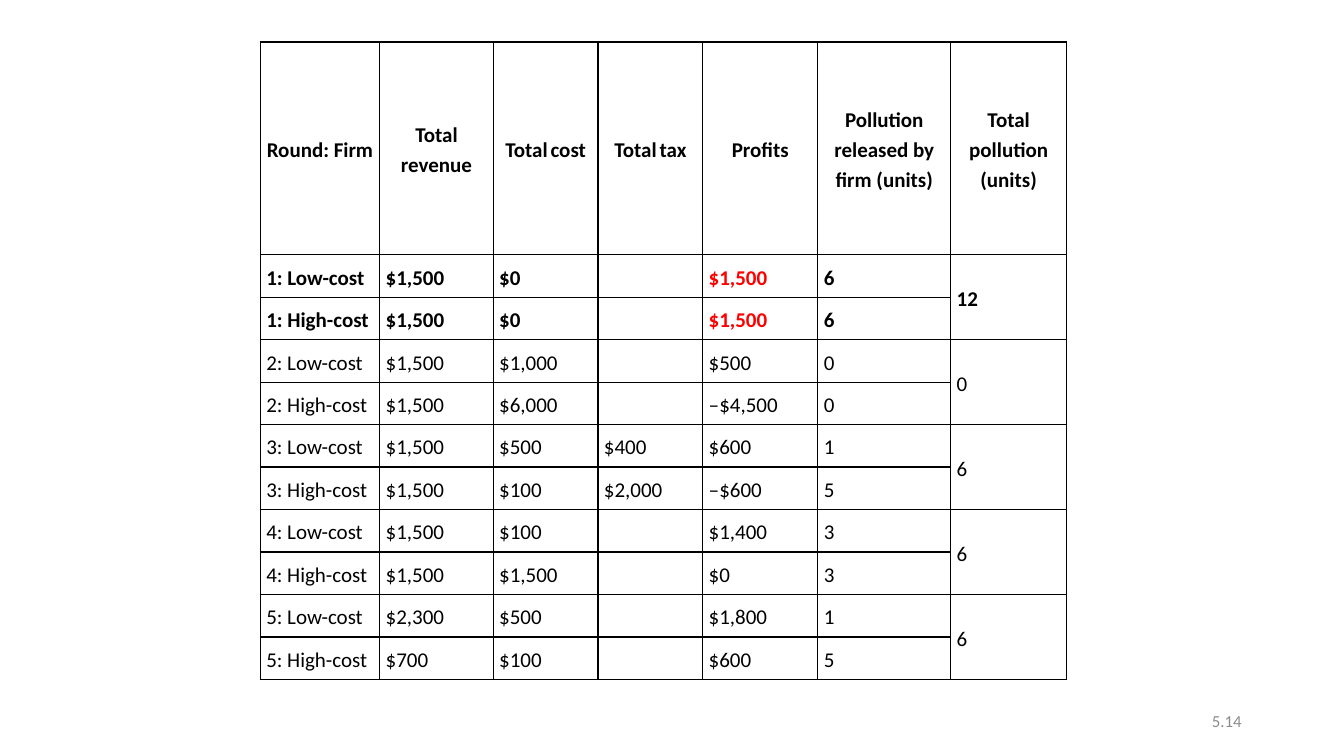
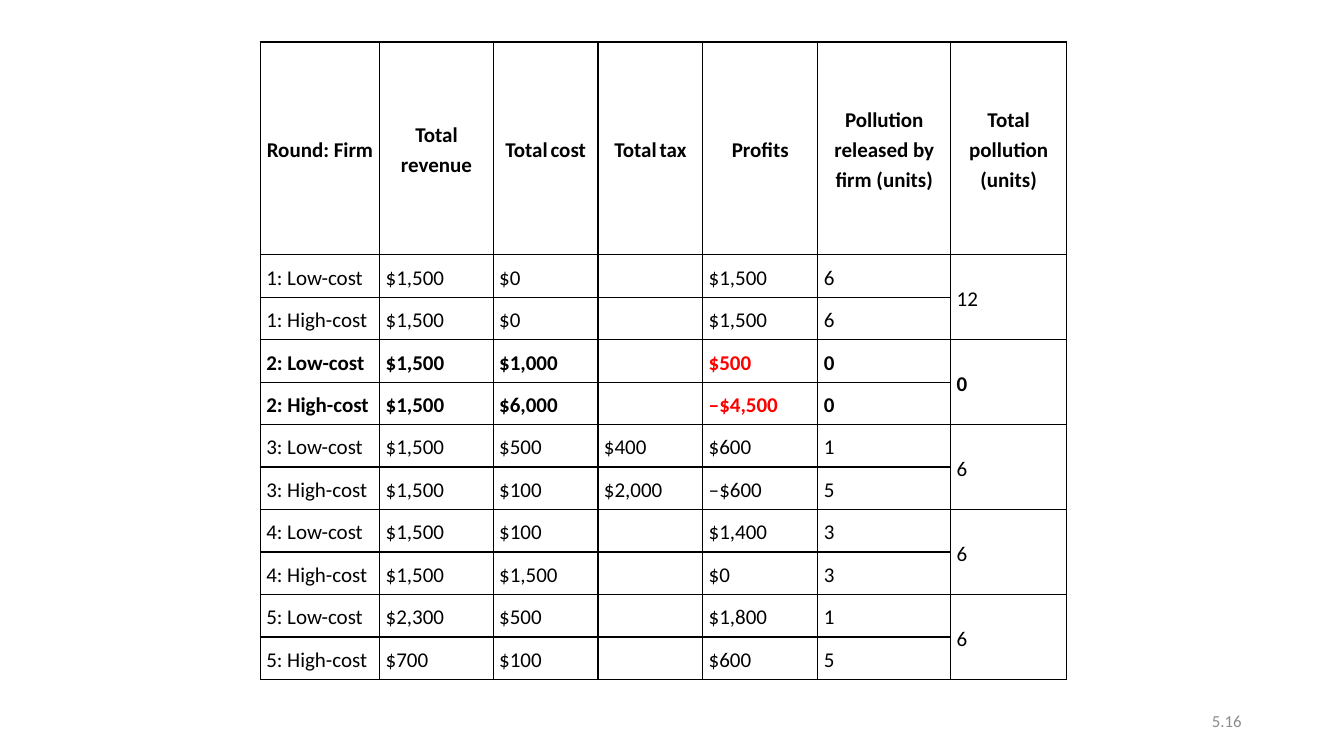
from lxml.etree import SubElement
from pptx import Presentation
from pptx.dml.color import RGBColor
from pptx.enum.text import MSO_ANCHOR, PP_ALIGN
from pptx.oxml.ns import qn
from pptx.util import Cm, Pt

COLORS = {"text": "000000", "highlight": "FF0000", "number": "8C8C8C", "border": "000000"}
FONT = "Calibri"
COLUMN_WIDTHS = [3.01, 2.86, 2.64, 2.64, 2.9, 3.35, 2.92]
HEADER_HEIGHT = 5.36
ROW_HEIGHT = 1.07
PROFIT_COLUMN = 4
TOTAL_COLUMN = 6

HEADERS = [
    ["Round: Firm"],
    ["Total", " ", "revenue"],
    ["Total", " ", "cost"],
    ["Total", " ", "tax"],
    ["Profits"],
    ["Pollution released by firm (units)"],
    ["Total pollution (units)"],
]
FIRM_ROWS = [
    ["1: Low-cost", "$1,500", "$0", "", "$1,500", "6", "12"],
    ["1: High-cost", "$1,500", "$0", "", "$1,500", "6", ""],
    ["2: Low-cost", "$1,500", "$1,000", "", "$500", "0", "0"],
    ["2: High-cost", "$1,500", "$6,000", "", "‒$4,500", "0", ""],
    ["3: Low-cost", "$1,500", "$500", "$400", "$600", "1", "6"],
    ["3: High-cost", "$1,500", "$100", "$2,000", "‒$600", "5", ""],
    ["4: Low-cost", "$1,500", "$100", "", "$1,400", "3", "6"],
    ["4: High-cost", "$1,500", "$1,500", "", "$0", "3", ""],
    ["5: Low-cost", "$2,300", "$500", "", "$1,800", "1", "6"],
    ["5: High-cost", "$700", "$100", "", "$600", "5", ""],
]
SLIDES = [("5.14", 1), ("5.16", 2)]


def add_run(paragraph, text, size, color, bold=False):
    run = paragraph.add_run()
    run.text = text
    run.font.name = FONT
    run.font.size = Pt(size)
    run.font.bold = bold
    run.font.color.rgb = RGBColor.from_string(COLORS[color])


def format_cell(cell):
    cell.margin_left = cell.margin_right = Cm(0.15)
    cell.margin_top = cell.margin_bottom = 0
    cell.vertical_anchor = MSO_ANCHOR.MIDDLE
    properties = cell._tc.get_or_add_tcPr()
    for side in ("a:lnL", "a:lnR", "a:lnT", "a:lnB"):
        line = SubElement(properties, qn(side), w=str(Pt(1)))
        fill = SubElement(line, qn("a:solidFill"))
        SubElement(fill, qn("a:srgbClr"), val=COLORS["border"])
    cell.fill.background()
    paragraph = cell.text_frame.paragraphs[0]
    paragraph.line_spacing = 1.15
    paragraph.space_after = Pt(10)
    return paragraph


presentation = Presentation()
presentation.slide_width = Cm(33.87)
presentation.slide_height = Cm(19.05)
blank_layout = presentation.slide_layouts[6]

for slide_number, highlighted_round in SLIDES:
    slide = presentation.slides.add_slide(blank_layout)
    table = slide.shapes.add_table(
        len(FIRM_ROWS) + 1, len(HEADERS), Cm(6.56), Cm(1.06),
        Cm(sum(COLUMN_WIDTHS)), Cm(HEADER_HEIGHT + ROW_HEIGHT * len(FIRM_ROWS)),
    ).table
    table.first_row = table.horz_banding = False
    for column, width in zip(table.columns, COLUMN_WIDTHS):
        column.width = Cm(width)
    for row in table.rows:
        row.height = Cm(ROW_HEIGHT)
    table.rows[0].height = Cm(HEADER_HEIGHT)

    for column_index, pieces in enumerate(HEADERS):
        paragraph = format_cell(table.cell(0, column_index))
        paragraph.alignment = PP_ALIGN.CENTER
        for piece in pieces:
            add_run(paragraph, piece, 9 if piece == " " else 15, "text", True)

    for row_index, values in enumerate(FIRM_ROWS, start=1):
        highlighted = (row_index + 1) // 2 == highlighted_round
        for column_index, value in enumerate(values):
            paragraph = format_cell(table.cell(row_index, column_index))
            red = highlighted and column_index == PROFIT_COLUMN
            if value:
                add_run(paragraph, value, 15, "highlight" if red else "text", highlighted)

    for row_index in range(1, len(FIRM_ROWS), 2):
        table.cell(row_index, TOTAL_COLUMN).merge(table.cell(row_index + 1, TOTAL_COLUMN))

    number_box = slide.shapes.add_textbox(Cm(23.92), Cm(17.66), Cm(7.62), Cm(1.01))
    number_box.text_frame.word_wrap = True
    number_box.text_frame.vertical_anchor = MSO_ANCHOR.MIDDLE
    paragraph = number_box.text_frame.paragraphs[0]
    paragraph.alignment = PP_ALIGN.RIGHT
    add_run(paragraph, slide_number, 12, "number")

presentation.save("out.pptx")
